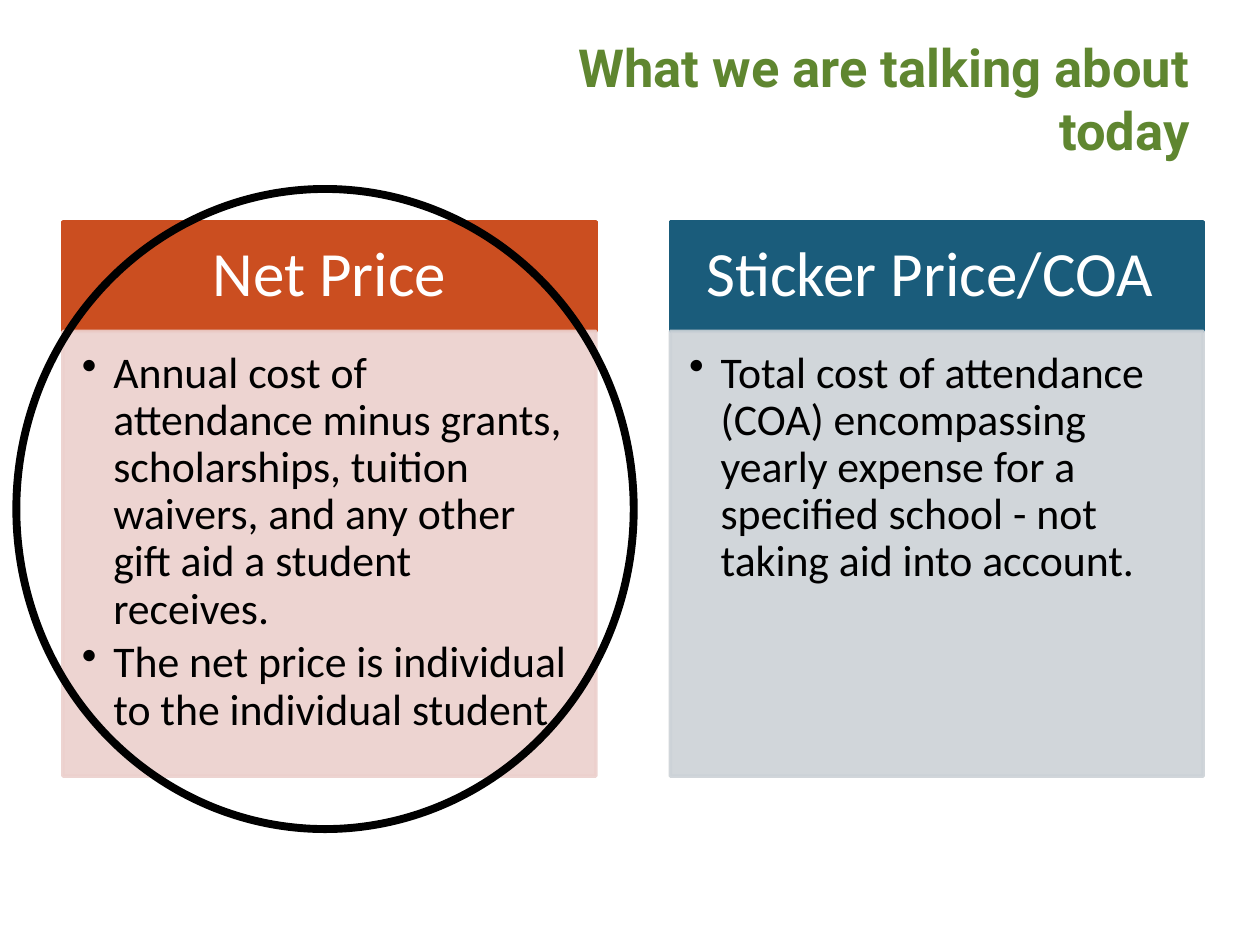
from dataclasses import dataclass

from lxml.etree import SubElement
from pptx import Presentation
from pptx.dml.color import RGBColor
from pptx.enum.shapes import MSO_SHAPE
from pptx.enum.text import MSO_ANCHOR, PP_ALIGN
from pptx.oxml.ns import qn
from pptx.shapes.autoshape import Shape
from pptx.slide import Slide
from pptx.text.text import TextFrame
from pptx.util import Emu, Pt

SCALE = 9144


@dataclass(frozen=True)
class Theme:
    green: str = "5F8630"
    white: str = "FFFFFF"
    black: str = "000000"
    orange: str = "CB4E20"
    rose: str = "ECD0CD"
    blue: str = "1A5C7B"
    grey: str = "CCD2D7"
    face: str = "Calibri"
    title_face: str = "Roboto"
    title: int = 30
    head: int = 36
    body: int = 25
    edge: float = 2
    ring: float = 4.5


@dataclass(frozen=True)
class Box:
    left: int
    top: int
    width: int
    height: int

    def emu(self) -> list[Emu]:
        return [px(n) for n in (self.left, self.top, self.width, self.height)]


@dataclass(frozen=True)
class Card:
    head: str
    items: tuple[str, ...]
    dark: str
    light: str


THEME = Theme()
CARDS = (
    Card(
        "Net Price",
        (
            "Annual cost of attendance minus grants, scholarships, tuition "
            "waivers, and any other gift aid a student receives.",
            "The net price is individual to the individual student.",
        ),
        THEME.orange,
        THEME.rose,
    ),
    Card(
        "Sticker Price/COA ",
        (
            "Total cost of attendance (COA) encompassing yearly expense for a "
            "specified school - not taking aid into account.",
        ),
        THEME.blue,
        THEME.grey,
    ),
)
LEFT, TOP, WIDTH, STEP = 50, 176, 423, 482
HEAD, BODY = 87, 353


def px(count: int) -> Emu:
    return Emu(count * SCALE)


def inset(frame: TextFrame, left: int, top: int, right: int, base: int) -> None:
    frame.word_wrap = True
    frame.margin_left, frame.margin_top = px(left), px(top)
    frame.margin_right, frame.margin_bottom = px(right), px(base)


def write(frame: TextFrame, lines: tuple[str, ...], align: PP_ALIGN, size: int,
          tint: str, face: str = THEME.face, bold: bool = False,
          space: float = 0.9, bullet: bool = False) -> None:
    for spot, line in enumerate(lines):
        para = frame.paragraphs[0] if spot == 0 else frame.add_paragraph()
        para.text = line
        para.alignment = align
        para.line_spacing = space
        if bullet:
            para.level = 1
            para.space_after = Pt(3.75)
            props = para._p.get_or_add_pPr()
            props.set("marL", str(px(25)))
            props.set("indent", str(px(-25)))
            SubElement(props, qn("a:buChar"), char="•")
        para.font.name = face
        para.font.size = Pt(size)
        para.font.bold = bold
        para.font.color.rgb = RGBColor.from_string(tint)


def panel(slide: Slide, box: Box, tint: str) -> Shape:
    shape = slide.shapes.add_shape(MSO_SHAPE.RECTANGLE, *box.emu())
    shape.shadow.inherit = False
    shape.fill.solid()
    shape.fill.fore_color.rgb = RGBColor.from_string(tint)
    shape.line.color.rgb = RGBColor.from_string(tint)
    shape.line.width = Pt(THEME.edge)
    return shape


def fade(shape: Shape, share: int) -> None:
    for tint in shape._element.spPr.iter(qn("a:srgbClr")):
        SubElement(tint, qn("a:alpha"), val=str(share * 1000))


def draw_card(slide: Slide, card: Card, left: int) -> None:
    head = panel(slide, Box(left, TOP, WIDTH, HEAD), card.dark)
    head.text_frame.vertical_anchor = MSO_ANCHOR.MIDDLE
    inset(head.text_frame, 28, 16, 28, 16)
    write(head.text_frame, (card.head,), PP_ALIGN.CENTER, THEME.head, THEME.white)

    body = panel(slide, Box(left, TOP + HEAD, WIDTH, BODY), card.light)
    fade(body, 90)
    body.text_frame.vertical_anchor = MSO_ANCHOR.TOP
    inset(body.text_frame, 15, 15, 19, 22)
    write(body.text_frame, card.items, PP_ALIGN.LEFT, THEME.body, THEME.black,
          bullet=True)


def draw_title(slide: Slide, text: str, box: Box) -> None:
    frame = slide.shapes.add_textbox(*box.emu()).text_frame
    frame.vertical_anchor = MSO_ANCHOR.MIDDLE
    inset(frame, 10, 5, 10, 5)
    write(frame, (text,), PP_ALIGN.RIGHT, THEME.title, THEME.green,
          face=THEME.title_face, bold=True, space=1.0)


def draw_ring(slide: Slide, box: Box) -> None:
    ring = slide.shapes.add_shape(MSO_SHAPE.OVAL, *box.emu())
    ring.shadow.inherit = False
    ring.fill.background()
    ring.line.color.rgb = RGBColor.from_string(THEME.black)
    ring.line.width = Pt(THEME.ring)


def main() -> None:
    deck = Presentation()
    deck.slide_width, deck.slide_height = px(1000), px(750)
    slide = deck.slides.add_slide(deck.slide_layouts[6])
    draw_title(slide, "What we are talking about today", Box(442, 25, 512, 105))
    for spot, card in enumerate(CARDS):
        draw_card(slide, card, LEFT + spot * STEP)
    draw_ring(slide, Box(13, 150, 490, 508))
    deck.save("out.pptx")


if __name__ == "__main__":
    main()
